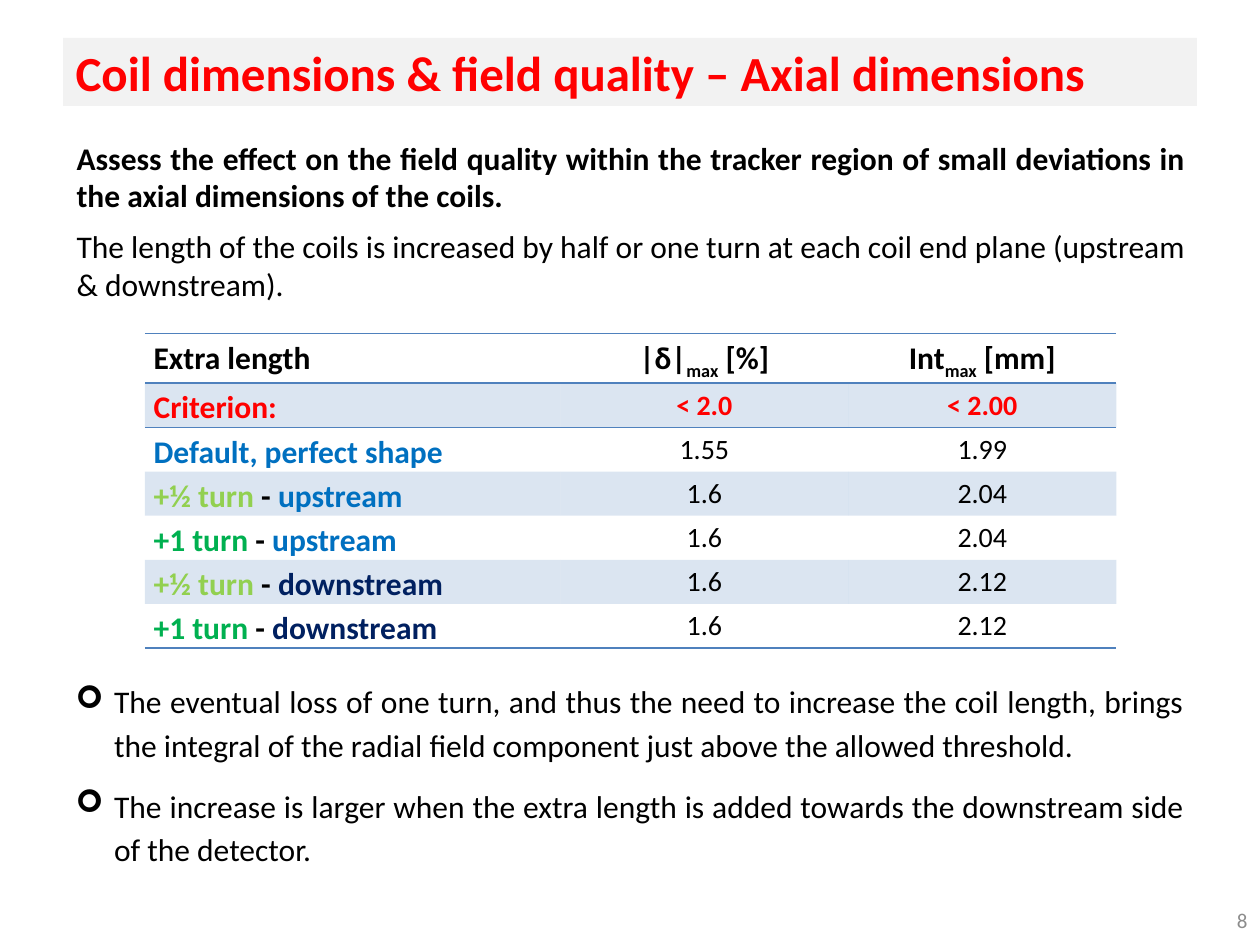
from lxml.etree import SubElement as add_xml
from pptx import Presentation
from pptx.dml.color import RGBColor
from pptx.enum.text import MSO_ANCHOR as Anchor, MSO_AUTO_SIZE as AutoSize, PP_ALIGN as Align
from pptx.oxml import parse_xml
from pptx.oxml.ns import nsdecls, qn
from pptx.util import Pt

BLACK, RED, BLUE, NAVY = "000000", "FF0000", "0070C0", "002060"
LIME, GREEN, RULE, GREY = "92D050", "00B050", "4F81BD", "8C8C8C"
NO_STYLE = "{2D5ABB26-0587-4C30-8999-92F81FD0307C}"


def color(value):
    return RGBColor.from_string(value)


def set_format(target, values):
    for name, value in values.items():
        setattr(target, name, value)


def place(shape, box):
    set_format(shape, dict(zip(("left", "top", "width", "height"), map(Pt, box))))


def add_span(para, text, size=18, fill=BLACK, bold=False, baseline=None):
    span = para.add_run()
    span.text = text
    set_format(span.font, {"name": "Calibri", "size": Pt(size), "bold": bold})
    span.font.color.rgb = color(fill)
    if baseline:
        span.font._element.set("baseline", str(baseline))


def add_text_box(page, box):
    shape = page.shapes.add_textbox(*map(Pt, box))
    shape.text_frame.word_wrap = True
    return shape.text_frame


def fill_title(page, box):
    title = page.shapes.title
    place(title, box)
    title.fill.solid()
    title.fill.fore_color.rgb = color("F2F2F2")
    set_format(title.text_frame, {"auto_size": AutoSize.NONE, "vertical_anchor": Anchor.MIDDLE})
    para = title.text_frame.paragraphs[0]
    para.alignment = Align.LEFT
    add_span(para, "Coil dimensions & field quality – Axial dimensions", 28, RED, True)


def add_intro(page, box):
    frame = add_text_box(page, box)
    aim, method = frame.paragraphs[0], frame.add_paragraph()
    set_format(aim, {"alignment": Align.JUSTIFY, "space_after": Pt(7.3)})
    method.alignment = Align.JUSTIFY
    add_span(aim, "Assess the effect on the field quality within the tracker region of "
             "small deviations in the axial dimensions of the coils.", bold=True)
    add_span(method, "The length of the coils is increased by half or one turn at each "
             "coil end plane (upstream & downstream).")


def add_rule(cell, position, side):
    cell._tc.get_or_add_tcPr().insert(position, parse_xml(
        f'<a:{side} {nsdecls("a")} w="{Pt(1)}"><a:solidFill>'
        f'<a:srgbClr val="{RULE}"/></a:solidFill></a:{side}>'))


def style_cell(cell, row, last_row):
    set_format(cell, {"margin_left": Pt(5), "margin_right": Pt(5),
                      "margin_top": 0, "margin_bottom": 0})
    if row % 2:
        cell.fill.solid()
        cell.fill.fore_color.rgb = color(RULE)
        tint = cell._tc.tcPr.find(".//" + qn("a:srgbClr"))
        add_xml(tint, qn("a:alpha"), val="20000")
    else:
        cell.fill.background()
    sides = {0: ("lnT", "lnB"), 1: ("lnT",), last_row: ("lnB",)}.get(row, ())
    for position, side in enumerate(sides):
        add_rule(cell, position, side)


def add_results_table(page, box):
    def header(symbol, unit):
        return [(symbol, 18, BLACK, True), ("max", 18, BLACK, True, -25000),
                (f" {unit}", 18, BLACK, True)]

    def case(turn, turn_color, side, side_color):
        return [(turn, 18, turn_color, True), (" - ", 18, BLACK, True),
                (side, 18, side_color, True)]

    def values(*texts, fill=BLACK, bold=False):
        return [[(text, 16, fill, bold)] for text in texts]

    rows = [
        [[("Extra length", 18, BLACK, True)], header("|δ|", "[%]"), header("Int", "[mm]")],
        [[("Criterion:", 18, RED, True)], *values("< 2.0", "< 2.00", fill=RED, bold=True)],
        [[("Default, perfect shape", 18, BLUE, True)], *values("1.55", "1.99")],
    ]
    for side, side_color, integral in (("upstream", BLUE, "2.04"), ("downstream", NAVY, "2.12")):
        for turn, turn_color in (("+½ turn", LIME), ("+1 turn", GREEN)):
            rows.append([case(turn, turn_color, side, side_color), *values("1.6", integral)])

    table = page.shapes.add_table(len(rows), 3, *map(Pt, box)).table
    table._tbl.tblPr.find(qn("a:tableStyleId")).text = NO_STYLE
    set_format(table, {"first_row": False, "horz_banding": False})
    for column, width in zip(table.columns, (237.6, 164.2, 153.4)):
        column.width = Pt(width)
    header_height = 28.5
    for row, contents in enumerate(rows):
        table.rows[row].height = Pt(
            (box[3] - header_height) / (len(rows) - 1) if row else header_height)
        for column, spans in enumerate(contents):
            cell = table.cell(row, column)
            style_cell(cell, row, len(rows) - 1)
            para = cell.text_frame.paragraphs[0]
            set_format(para, {"alignment": Align.CENTER if column else Align.LEFT,
                              "line_spacing": 1.15})
            for span in spans:
                add_span(para, *span)


def fill_conclusions(page, box):
    body = page.placeholders[1]
    place(body, box)
    frame = body.text_frame
    frame.auto_size = AutoSize.NONE
    conclusions = (
        "The eventual loss of one turn, and thus the need to increase the coil length, "
        "brings the integral of the radial field component just above the allowed threshold.",
        "The increase is larger when the extra length is added towards the downstream side "
        "of the detector.",
    )
    for index, text in enumerate(conclusions):
        para = frame.add_paragraph() if index else frame.paragraphs[0]
        set_format(para, {"alignment": Align.JUSTIFY, "line_spacing": 1.15,
                          "space_before": Pt(0), "space_after": Pt(10)})
        properties = para._p.get_or_add_pPr()
        properties.set("marL", str(Pt(22)))
        properties.set("indent", str(-Pt(22)))
        add_xml(properties, qn("a:buFont"), typeface="Wingdings")
        add_xml(properties, qn("a:buChar"), char="➢")
        add_span(para, text)


def add_page_number(page, box):
    frame = add_text_box(page, box)
    frame.vertical_anchor = Anchor.MIDDLE
    para = frame.paragraphs[0]
    para.alignment = Align.RIGHT
    add_span(para, "8", 12, GREY)


def main():
    deck = Presentation()
    set_format(deck, {"slide_width": Pt(720), "slide_height": Pt(540)})
    page = deck.slides.add_slide(deck.slide_layouts[1])
    # Heading and introduction
    fill_title(page, (36, 21.6, 648, 38.9))
    add_intro(page, (36.7, 75.6, 648, 101.5))
    # Field quality by extra length
    add_results_table(page, (82.8, 190.5, 555.2, 180))
    # Conclusions and footer
    fill_conclusions(page, (36, 383, 648, 117.4))
    add_page_number(page, (552, 511.2, 168, 28.8))
    deck.save("out.pptx")


if __name__ == "__main__":
    main()
